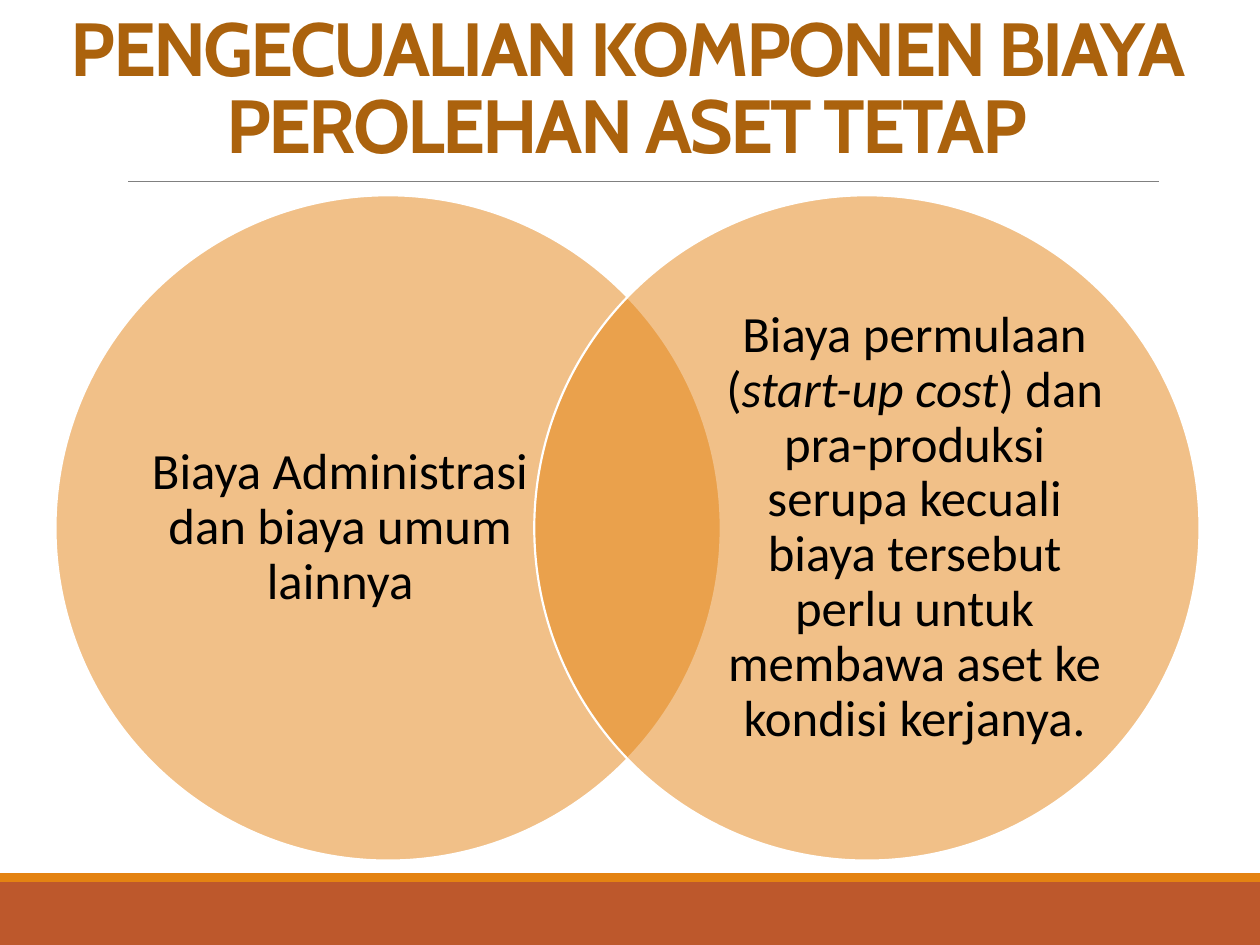
from lxml.etree import SubElement
from pptx import Presentation
from pptx.dml.color import RGBColor
from pptx.enum.shapes import MSO_CONNECTOR, MSO_SHAPE
from pptx.enum.text import MSO_ANCHOR, PP_ALIGN
from pptx.oxml.ns import qn
from pptx.util import Inches, Pt

COLORS = {"title": "AB620D", "text": "000000", "rule": "808080",
          "band": "BD582C", "accent": "E48312", "edge": "FFFFFF"}
TITLE = "PENGECUALIAN KOMPONEN BIAYA PEROLEHAN ASET TETAP"
# Each circle: circle left, label left, runs of (text, italic)
CIRCLES = [
    (0.44, 1.18, [("Biaya Administrasi dan biaya umum lainnya", False)]),
    (4.24, 5.74, [
        ("Biaya permulaan (", False),
        ("start-up cost", True),
        (") dan pra-produksi serupa kecuali biaya tersebut perlu untuk "
         "membawa aset ke kondisi kerjanya.", False)]),
]
BANDS = [(7, 0.5, "band"), (6.93, 0.07, "accent")]
TOP, SIZE = 1.55, 5.28
LABEL_W, LABEL_H = 3.04, 4.03


def color(name):
    return RGBColor.from_string(COLORS[name])


def add_shape(slide, kind, box, fill):
    shape = slide.shapes.add_shape(kind, *map(Inches, box))
    shape.shadow.inherit = False
    shape.fill.solid()
    shape.fill.fore_color.rgb = color(fill)
    shape.line.fill.background()
    return shape


def add_text(slide, box, runs, font, size, tint, spacing, anchor):
    """Add a centred text box and return its frame."""
    frame = slide.shapes.add_textbox(*map(Inches, box)).text_frame
    frame.word_wrap = True
    frame.vertical_anchor = anchor
    para = frame.paragraphs[0]
    para.alignment = PP_ALIGN.CENTER
    para.line_spacing = spacing
    para.font.name, para.font.size = font, Pt(size)
    para.font.color.rgb = color(tint)
    for text, italic in runs:
        run = para.add_run()
        run.text = text
        if italic:
            run.font.italic = True
    return frame


def add_circle(slide, left):
    shape = add_shape(slide, MSO_SHAPE.OVAL, (left, TOP, SIZE, SIZE), "accent")
    tint = shape.fill._xPr.find(qn("a:solidFill"))[0]
    SubElement(tint, qn("a:alpha")).set("val", "50000")
    shape.line.color.rgb = color("edge")
    shape.line.width = Pt(1.25)


def add_label(slide, left, runs):
    top = TOP + (SIZE - LABEL_H) / 2
    frame = add_text(slide, (left, top, LABEL_W, LABEL_H), runs,
                     "Calibri", 29, "text", 0.9, MSO_ANCHOR.MIDDLE)
    frame.margin_left = frame.margin_right = 0
    frame.margin_top = frame.margin_bottom = 0


def add_rule(slide):
    line = slide.shapes.add_connector(
        MSO_CONNECTOR.STRAIGHT, *map(Inches, (1.02, 1.44, 9.2, 1.44)))
    line.line.color.rgb = color("rule")
    line.line.width = Pt(0.5)
    SubElement(line._element.spPr, qn("a:effectLst"))


def add_title(slide):
    frame = add_text(slide, (0.22, 0.09, 9.51, 1.3), [(TITLE, False)],
                     "Cabin", 43, "title", 0.85, MSO_ANCHOR.BOTTOM)
    para = frame.paragraphs[0]
    para.font.bold = True
    para.runs[0].font._element.set("spc", "-150")


def main():
    deck = Presentation()
    deck.slide_width, deck.slide_height = Inches(10), Inches(7.5)
    slide = deck.slides.add_slide(deck.slide_layouts[6])
    for top, height, fill in BANDS:
        add_shape(slide, MSO_SHAPE.RECTANGLE, (0, top, 10, height), fill)
    add_rule(slide)
    add_title(slide)
    for left, label, runs in CIRCLES:
        add_circle(slide, left)
        add_label(slide, label, runs)
    deck.save("out.pptx")


if __name__ == "__main__":
    main()
